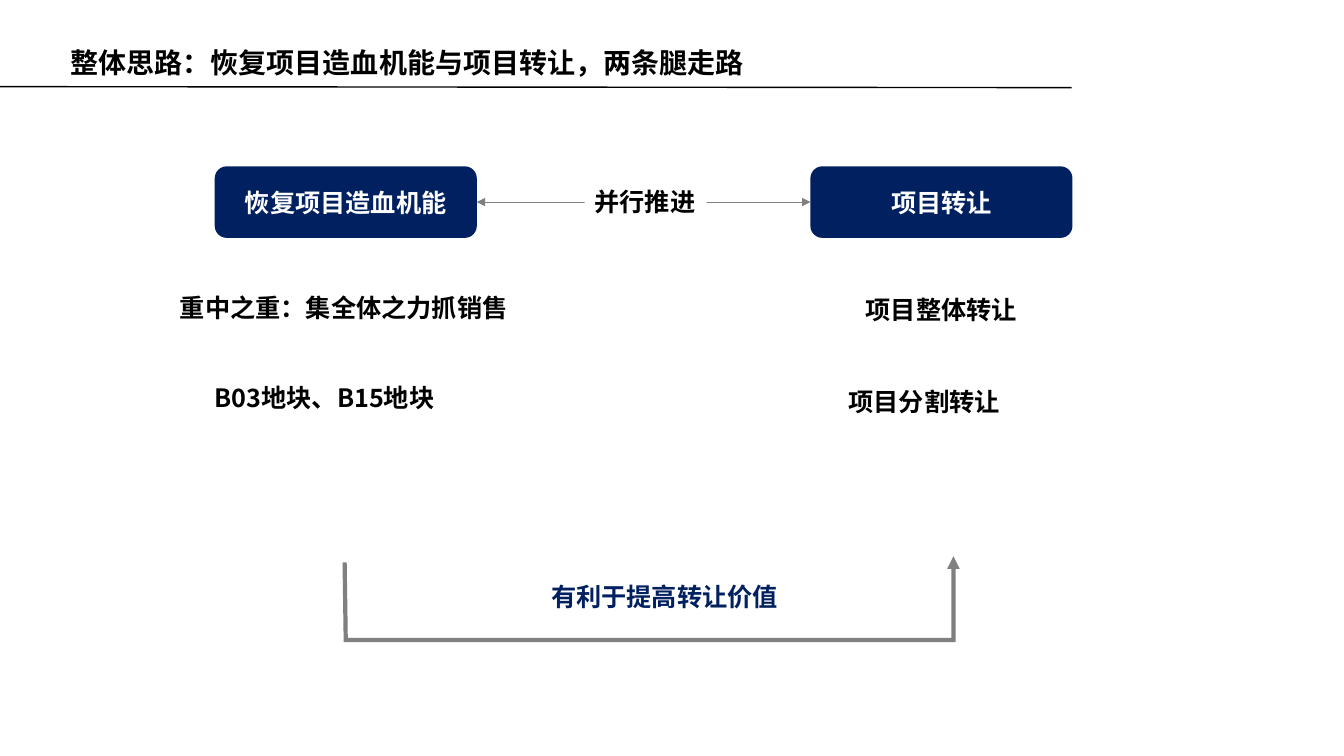
from dataclasses import dataclass

from lxml import etree
from pptx import Presentation
from pptx.dml.color import RGBColor
from pptx.enum.shapes import MSO_CONNECTOR, MSO_SHAPE
from pptx.enum.text import MSO_ANCHOR, MSO_AUTO_SIZE, PP_ALIGN
from pptx.oxml.ns import qn
from pptx.util import Pt

STRAIGHT = MSO_CONNECTOR.STRAIGHT
RECTANGLE, ROUNDED = MSO_SHAPE.RECTANGLE, MSO_SHAPE.ROUNDED_RECTANGLE
TOP, MIDDLE = MSO_ANCHOR.TOP, MSO_ANCHOR.MIDDLE
LEFT, CENTER = PP_ALIGN.LEFT, PP_ALIGN.CENTER
NO_AUTOFIT = MSO_AUTO_SIZE.NONE

FONT = "Noto Sans CJK SC"
NAVY, GREY, BLACK, WHITE = "002060", "808080", "000000", "FFFFFF"
CARD_TOP, CARD_WIDTH, CARD_HEIGHT = 118.8, 187.2, 51.1
LABEL_HEIGHT = 29.1


@dataclass
class Label:
    text: str
    left: float
    top: float
    width: float
    color: str = BLACK
    wrap: bool = False
    filled: bool = False


MEASURES = [
    Label("重中之重：集全体之力抓销售", 121.4, 205.2, 250.6),
    Label("B03地块、B15地块", 146.2, 269.3, 175, wrap=True),
    Label("项目整体转让", 611.3, 206.6, 123.8),
    Label("项目分割转让", 599, 272.2, 123.8),
]
PARALLEL = Label("并行推进", 417.6, 129.6, 87.1, filled=True)
BENEFIT = Label("有利于提高转让价值", 386.6, 411.8, 177.8, NAVY, filled=True)


def rgb(color: str) -> RGBColor:
    return RGBColor.from_string(color)


def write(shape, text: str, size: float, color: str, align=LEFT, anchor=TOP,
          wrap: bool = True) -> None:
    frame = shape.text_frame
    frame.text = text
    frame.word_wrap = wrap
    frame.auto_size = NO_AUTOFIT
    frame.vertical_anchor = anchor
    paragraph = frame.paragraphs[0]
    paragraph.alignment = align
    run = paragraph.runs[0]
    run.font.size = Pt(size)
    run.font.bold = True
    run.font.color.rgb = rgb(color)
    run.font.name = FONT
    etree.SubElement(run.font._element, qn("a:ea"), typeface=FONT)


def add_block(slide, kind, left: float, top: float, width: float,
              height: float, fill: str):
    block = slide.shapes.add_shape(kind, Pt(left), Pt(top), Pt(width), Pt(height))
    block.shadow.inherit = False
    block.fill.solid()
    block.fill.fore_color.rgb = rgb(fill)
    block.line.fill.background()
    return block


def add_card(slide, text: str, left: float):
    card = add_block(slide, ROUNDED, left, CARD_TOP, CARD_WIDTH, CARD_HEIGHT, NAVY)
    write(card, text, 18, WHITE, CENTER, MIDDLE)
    return card


def add_label(slide, label: Label) -> None:
    place = (label.left, label.top, label.width, LABEL_HEIGHT)
    if label.filled:
        box = add_block(slide, RECTANGLE, *place, WHITE)
    else:
        box = slide.shapes.add_textbox(*map(Pt, place))
    write(box, label.text, 18, label.color, wrap=label.wrap)


def style_line(shape, color: str, width: float, arrowheads: tuple[str, ...] = ()) -> None:
    """Colour a line and add triangles at the named ends, headEnd before tailEnd."""
    shape.line.color.rgb = rgb(color)
    shape.line.width = Pt(width)
    outline = shape.line._get_or_add_ln()
    etree.SubElement(outline, qn("a:miter"), lim="800000")
    for end in arrowheads:
        etree.SubElement(outline, qn(f"a:{end}"), type="triangle")


def add_line(slide, start: tuple[float, float], end: tuple[float, float]):
    line = slide.shapes.add_connector(STRAIGHT, *map(Pt, start + end))
    etree.SubElement(line._element.spPr, qn("a:effectLst"))
    return line


def add_return_arrow(slide) -> None:
    start, *corners = [
        (Pt(x), Pt(y))
        for x, y in [(246.2, 401.8), (247, 457.2), (681.1, 457.2), (681.1, 397.4)]
    ]
    builder = slide.shapes.build_freeform(*start)
    builder.add_line_segments(corners, close=False)
    arrow = builder.convert_to_shape()
    arrow.shadow.inherit = False
    arrow.fill.background()
    style_line(arrow, GREY, 3, ("tailEnd",))


def main() -> None:
    deck = Presentation()
    deck.slide_width, deck.slide_height = Pt(960), Pt(540)
    slide = deck.slides.add_slide(deck.slide_layouts[5])

    title = slide.shapes.title
    title.left, title.top, title.width, title.height = map(Pt, (43.2, 28.8, 555.8, 39.6))
    write(title, "整体思路：恢复项目造血机能与项目转让，两条腿走路", 20, BLACK)
    style_line(add_line(slide, (0, 61.9), (765.4, 62.6)), BLACK, 1)

    recovery = add_card(slide, "恢复项目造血机能", 153.4)
    transfer = add_card(slide, "项目转让", 578.9)
    for measure in MEASURES:
        add_label(slide, measure)

    middle = CARD_TOP + CARD_HEIGHT / 2
    parallel_arrow = add_line(slide, (340.6, middle), (578.9, middle))
    parallel_arrow.begin_connect(recovery, 3)
    parallel_arrow.end_connect(transfer, 1)
    style_line(parallel_arrow, GREY, 0.5, ("headEnd", "tailEnd"))
    add_label(slide, PARALLEL)

    add_return_arrow(slide)
    add_label(slide, BENEFIT)
    deck.save("out.pptx")


if __name__ == "__main__":
    main()
